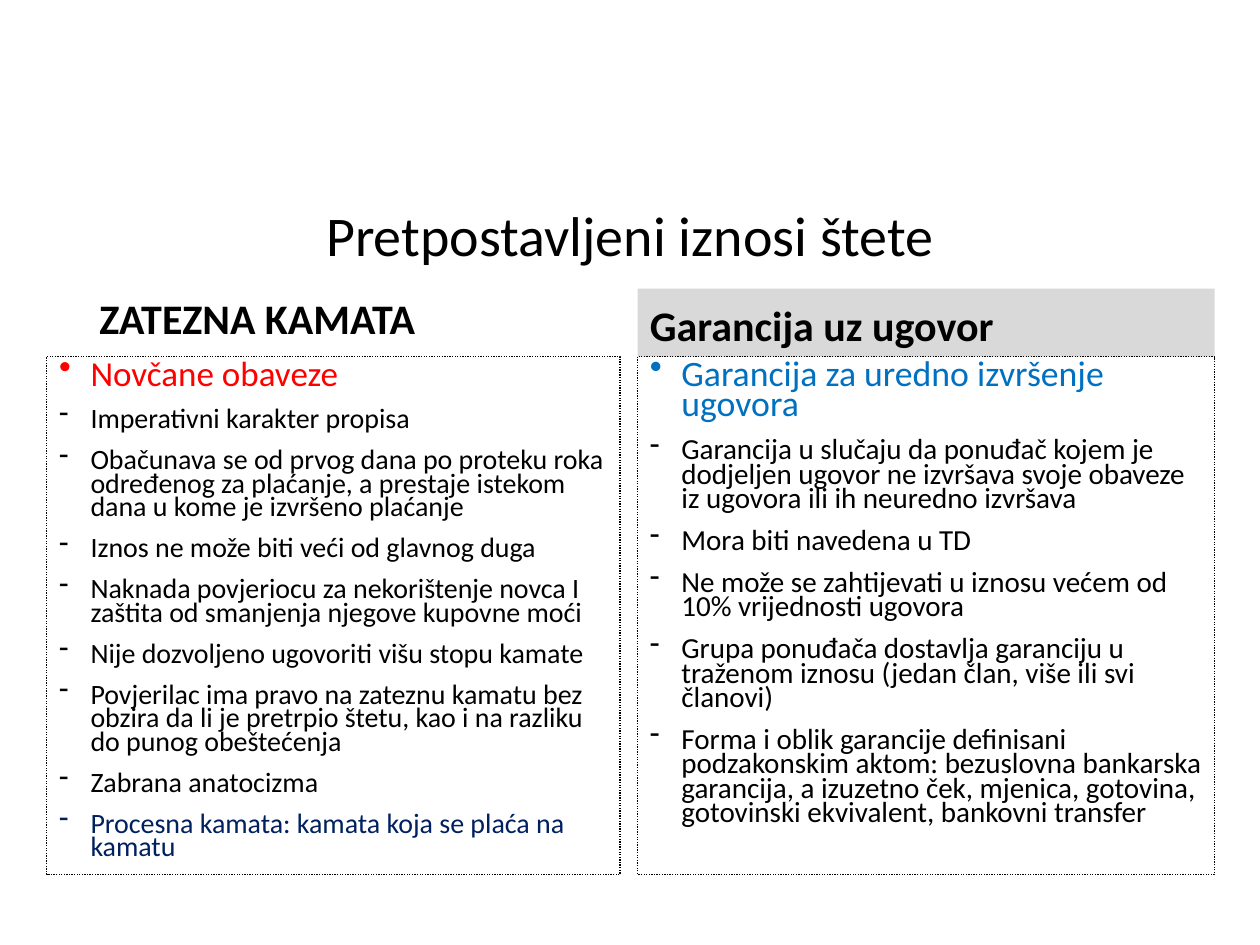
"""Build a slide comparing default interest with the contract guarantee."""
from lxml import etree
from pptx import Presentation
from pptx import util as u
from pptx.dml.color import RGBColor
from pptx.enum import dml, shapes, text
from pptx.oxml.ns import qn

COLORS = {"black": "000000", "red": "FF0000", "navy": "002060",
          "blue": "0070C0", "gray": "D9D9D9"}
FONT = "Calibri"
TITLE = "Pretpostavljeni iznosi štete"
BODY_TOP, BODY_HEIGHT = 2.83, 4.11
INDENT = 0.25

COLUMNS = [
    {"left": 0.37, "width": 4.55, "sizes": (20, 16),
     "heading": "ZATEZNA KAMATA", "heading_box": (0.69, 1.88, 4.23, 0.9), "heading_fill": None,
     "lead": ("Novčane obaveze", "red"),
     "points": [
         ("Imperativni karakter propisa", "black"),
         ("Obačunava se od prvog dana po proteku roka određenog za plaćanje, "
          "a prestaje istekom dana u kome je izvršeno plaćanje", "black"),
         ("Iznos ne može biti veći od glavnog duga", "black"),
         ("Naknada povjeriocu za nekorištenje novca I zaštita od smanjenja "
          "njegove kupovne moći", "black"),
         ("Nije dozvoljeno ugovoriti višu stopu kamate", "black"),
         ("Povjerilac ima pravo na zateznu kamatu bez obzira da li je pretrpio štetu, "
          "kao i na razliku do punog obeštećenja", "black"),
         ("Zabrana anatocizma", "black"),
         ("Procesna kamata: kamata koja se plaća na kamatu", "navy")]},
    {"left": 5.06, "width": 4.58, "sizes": (20.4, 16.6),
     "heading": "Garancija uz ugovor", "heading_box": (5.06, 2.29, 4.58, 0.54),
     "heading_fill": "gray",
     "lead": ("Garancija za uredno izvršenje ugovora", "blue"),
     "points": [
         ("Garancija u slučaju da ponuđač kojem je dodjeljen ugovor ne izvršava "
          "svoje obaveze iz ugovora ili ih neuredno izvršava", "black"),
         ("Mora biti navedena u TD", "black"),
         ("Ne može se zahtijevati u iznosu većem od 10% vrijednosti ugovora", "black"),
         ("Grupa ponuđača dostavlja garanciju u traženom iznosu "
          "(jedan član, više ili svi članovi)", "black"),
         ("Forma i oblik garancije definisani podzakonskim aktom: bezuslovna bankarska "
          "garancija, a izuzetno ček, mjenica, gotovina, gotovinski ekvivalent, "
          "bankovni transfer", "black")]},
]


def color(name):
    return RGBColor.from_string(COLORS[name])


def write(paragraph, words, size, color_name, spacing, bold=False, bullet=None,
          align=text.PP_ALIGN.LEFT):
    paragraph.text = words
    if bullet:
        properties = paragraph._p.get_or_add_pPr()
        properties.set("marL", str(u.Inches(INDENT)))
        properties.set("indent", str(-u.Inches(INDENT)))
        etree.SubElement(properties, qn("a:buChar")).set("char", bullet)
    paragraph.alignment = align
    paragraph.line_spacing = spacing
    font = paragraph.font
    font.name, font.size, font.bold = FONT, u.Pt(size), bold
    font.color.rgb = color(color_name)


def add_box(slide, box, anchor, fill=None, outlined=False):
    shape = slide.shapes.add_shape(shapes.MSO_SHAPE.RECTANGLE, *map(u.Inches, box))
    shape.shadow.inherit = False
    if fill:
        shape.fill.solid()
        shape.fill.fore_color.rgb = color(fill)
    else:
        shape.fill.background()
    if outlined:
        shape.line.color.rgb = color("black")
        shape.line.width = u.Pt(0.75)
        shape.line.dash_style = dml.MSO_LINE.ROUND_DOT
    else:
        shape.line.fill.background()
    frame = shape.text_frame
    frame.word_wrap = True
    frame.vertical_anchor = anchor
    return frame


def add_column(slide, column):
    heading = add_box(slide, column["heading_box"], text.MSO_ANCHOR.BOTTOM,
                      column["heading_fill"])
    write(heading.paragraphs[0], column["heading"], 24, "black", 0.9, bold=True)

    body = add_box(slide, (column["left"], BODY_TOP, column["width"], BODY_HEIGHT),
                   text.MSO_ANCHOR.TOP, outlined=True)
    lead_size, point_size = column["sizes"]
    write(body.paragraphs[0], *column["lead"][:1], lead_size, column["lead"][1], 0.7, bullet="•")
    for words, color_name in column["points"]:
        paragraph = body.add_paragraph()
        write(paragraph, words, point_size, color_name, 0.7, bullet="-")
        paragraph.space_before = u.Pt(10)


def main():
    presentation = Presentation()
    presentation.slide_width, presentation.slide_height = u.Inches(10), u.Inches(7.5)
    slide = presentation.slides.add_slide(presentation.slide_layouts[5])
    title = slide.shapes.title
    title.left, title.top, title.width, title.height = map(u.Inches, (0.69, 1.63, 8.62, 0.55))
    title.text_frame.vertical_anchor = text.MSO_ANCHOR.MIDDLE
    write(title.text_frame.paragraphs[0], TITLE, 32, "black", 0.8, align=text.PP_ALIGN.CENTER)
    for column in COLUMNS:
        add_column(slide, column)
    presentation.save("out.pptx")


if __name__ == "__main__":
    main()
